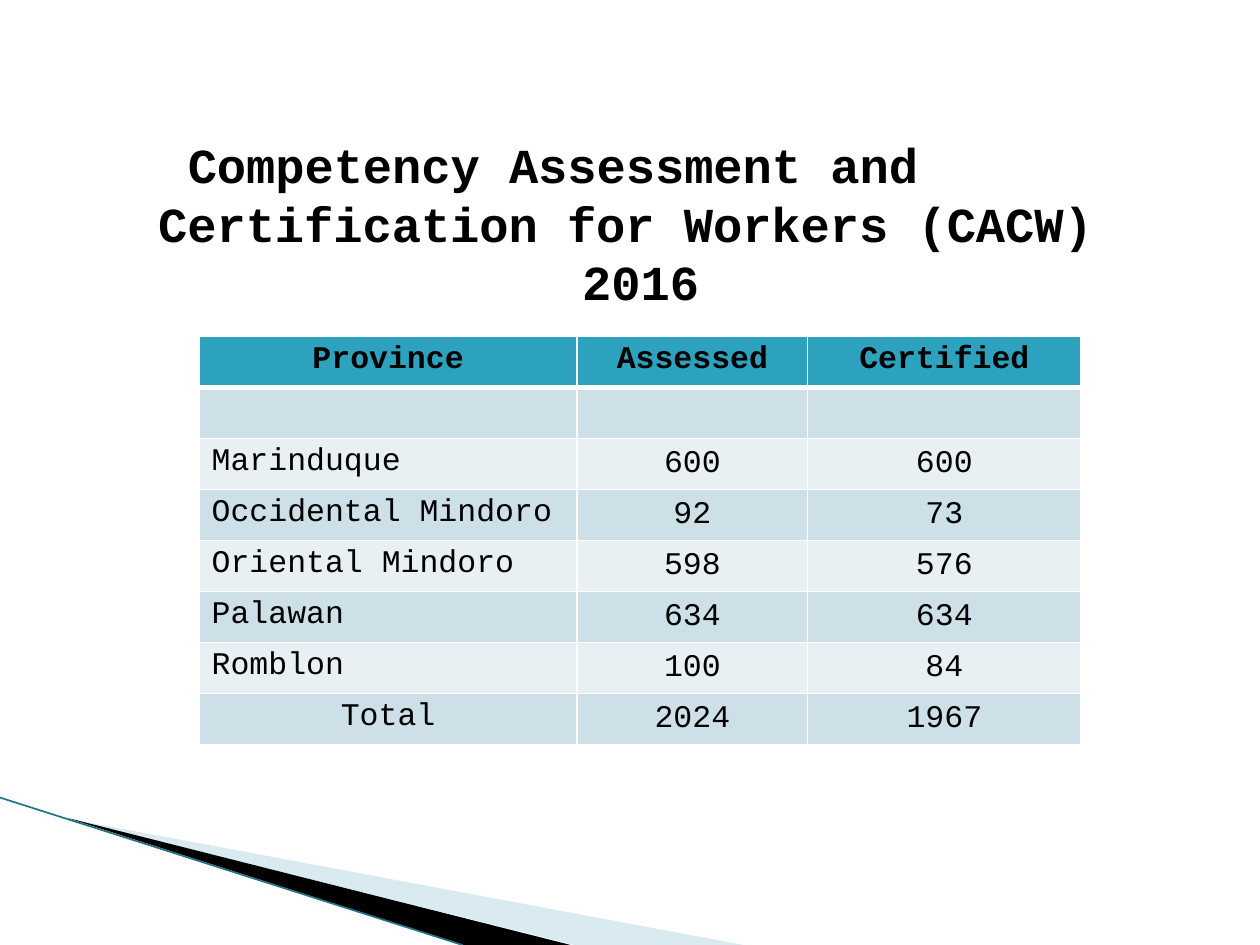
from lxml import etree
from pptx import Presentation, util as u
from pptx.dml.color import RGBColor
from pptx.enum import shapes, text
from pptx.oxml import ns

BLACK = RGBColor(0x00, 0x00, 0x00)
WHITE = RGBColor(0xFF, 0xFF, 0xFF)
TEAL = RGBColor(0x2D, 0xA2, 0xBF)
DARK_TEAL = RGBColor(0x1F, 0x74, 0x87)
ICE = RGBColor(0xA0, 0xCB, 0xDC)
BAND_DARK = RGBColor(0xCD, 0xE0, 0xE8)
BAND_LIGHT = RGBColor(0xE8, 0xF0, 0xF4)

CENTER, LEFT = text.PP_ALIGN.CENTER, text.PP_ALIGN.LEFT
TOP, MIDDLE = text.MSO_ANCHOR.TOP, text.MSO_ANCHOR.MIDDLE

TITLE = [
    ("Competency Assessment and", LEFT, 4.7),
    ("Certification for Workers (CACW)", LEFT, 2.35),
    ("2016", CENTER, 0),
]
RESULTS = [
    ("Province", "Assessed", "Certified"),
    ("", "", ""),
    ("Marinduque", "600", "600"),
    ("Occidental Mindoro", "92", "73"),
    ("Oriental Mindoro", "598", "576"),
    ("Palawan", "634", "634"),
    ("Romblon", "100", "84"),
    ("Total", "2024", "1967"),
]


def apply(target, values):
    for name, value in values.items():
        setattr(target, name, value)


class SlideBuilder:
    columns, rows = 100, 75
    font = "Courier New"

    def __init__(self, deck):
        self.deck = deck
        self.page = deck.slides.add_slide(deck.slide_layouts[5])

    def x(self, columns):
        return round(self.deck.slide_width * columns / self.columns)

    def y(self, rows):
        return round(self.deck.slide_height * rows / self.rows)

    def style(self, para, size, bold, align):
        para.alignment = align
        apply(para.font, {"name": self.font, "size": u.Pt(size), "bold": bold})
        para.font.color.rgb = BLACK

    def title(self, left, top, width, height, lines):
        box = self.page.shapes.title
        apply(box, {"left": self.x(left), "top": self.y(top),
                    "width": self.x(width), "height": self.y(height)})
        frame = box.text_frame
        apply(frame, {"word_wrap": True, "vertical_anchor": MIDDLE,
                      "auto_size": text.MSO_AUTO_SIZE.NONE})
        for index, (words, align, indent) in enumerate(lines):
            para = frame.add_paragraph() if index else frame.paragraphs[0]
            para.text = words
            para.line_spacing = u.Pt(33.4)
            para._p.get_or_add_pPr().set("marL", str(self.x(indent)))
            self.style(para, 27.9, True, align)

    def wedge(self, points, color, opacity=100):
        corners = [(self.x(column), self.y(row)) for column, row in points]
        builder = self.page.shapes.build_freeform(*corners[0])
        builder.add_line_segments(corners[1:], close=True)
        shape = builder.convert_to_shape()
        shape.shadow.inherit = False
        shape.fill.solid()
        shape.fill.fore_color.rgb = color
        shape.line.fill.background()
        if opacity < 100:
            tint = shape._element.spPr.find(".//" + ns.qn("a:srgbClr"))
            etree.SubElement(tint, ns.qn("a:alpha"), val=str(opacity * 1000))

    def line(self, start, end, color, width):
        rule = self.page.shapes.add_connector(
            shapes.MSO_CONNECTOR.STRAIGHT,
            self.x(start[0]), self.y(start[1]), self.x(end[0]), self.y(end[1]))
        rule.line.color.rgb = color
        rule.line.width = u.Pt(width)
        etree.SubElement(rule._element.spPr, ns.qn("a:effectLst"))

    def borders(self, cell, widths):
        properties = cell._tc.get_or_add_tcPr()
        for index, (side, width) in enumerate(widths.items()):
            edge = etree.Element(ns.qn("a:ln" + side), w=str(u.Pt(width)))
            fill = etree.SubElement(edge, ns.qn("a:solidFill"))
            etree.SubElement(fill, ns.qn("a:srgbClr"), val=str(WHITE))
            properties.insert(index, edge)

    def table(self, left, top, widths, row_height, records):
        table = self.page.shapes.add_table(
            len(records), len(widths), self.x(left), self.y(top),
            self.x(sum(widths)), self.y(row_height * len(records))).table
        for column, width in zip(table.columns, widths):
            column.width = self.x(width)
        last = len(records) - 1
        for r, record in enumerate(records):
            table.rows[r].height = self.y(row_height)
            band = BAND_DARK if r % 2 else BAND_LIGHT
            for c, words in enumerate(record):
                cell = table.cell(r, c)
                cell.text = words
                cell.fill.solid()
                cell.fill.fore_color.rgb = band if r else TEAL
                cell.vertical_anchor = MIDDLE if r and c else TOP
                align = LEFT if c == 0 and 0 < r < last else CENTER
                self.style(cell.text_frame.paragraphs[0], 18, r == 0, align)
                self.borders(cell, {"L": 1, "R": 1, "T": 3 if r == 1 else 1,
                                    "B": 1 if r else 3})


def main():
    deck = Presentation()
    deck.slide_width, deck.slide_height = u.Inches(10), u.Inches(7.5)
    slide = SlideBuilder(deck)
    slide.wedge([(5.5, 65), (59, 75), (45.6, 75)], ICE, 40)
    slide.wedge([(5.3, 64.9), (45.3, 75), (36.8, 75)], BLACK)
    slide.line((0, 63.3), (36.7, 75), DARK_TEAL, 0.95)
    slide.table(15.8, 26.7, (30, 18.3, 21.7), 4.05, RESULTS)
    slide.title(9.2, 13.1, 83.3, 9.2, TITLE)
    deck.save("out.pptx")


if __name__ == "__main__":
    main()
